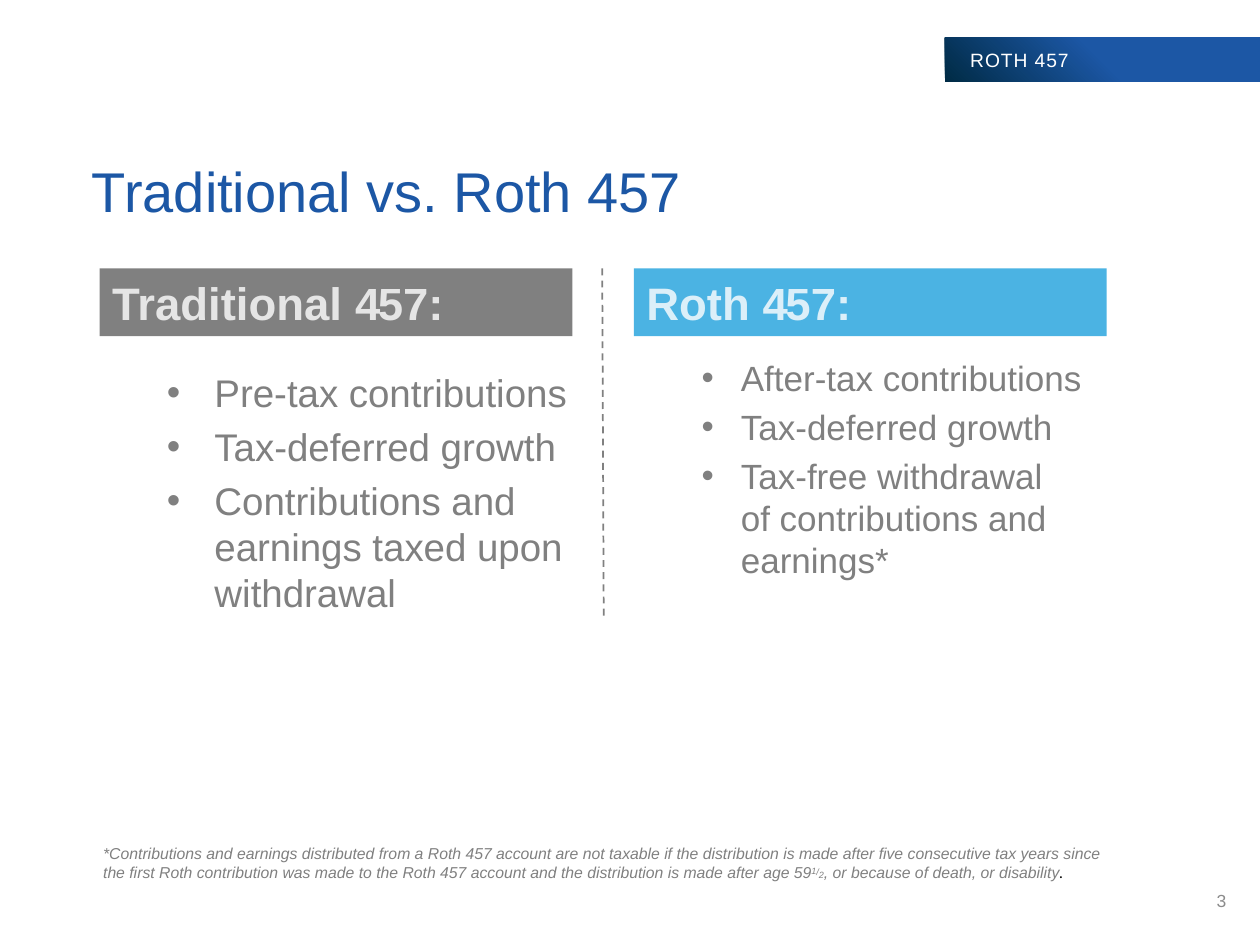
from dataclasses import dataclass

from lxml.etree import SubElement
from pptx import Presentation
from pptx.dml.color import RGBColor
from pptx.enum.dml import MSO_LINE_DASH_STYLE as Dash
from pptx.enum.shapes import MSO_CONNECTOR as Connector, MSO_SHAPE as Shape
from pptx.enum.text import MSO_ANCHOR as Anchor, MSO_AUTO_SIZE as AutoSize, PP_ALIGN as Align
from pptx.oxml.ns import qn
from pptx.util import Cm, Pt

COLORS = {
    "navy": "002B45", "blue": "1C57A5", "sky": "4BB3E3", "gray": "808080",
    "number": "8C8C8C", "white": "FFFFFF", "black": "000000",
}
TOP = 5.41  # shared top edge of both columns, in cm


@dataclass
class Column:
    list_left: float
    heading_left: float
    fill: str
    heading: str
    items: list[str]
    size: int
    inset_top: float
    indent: float
    hanging: float


COLUMNS = [
    Column(1.83, 2.01, "gray", "Traditional ",
           ["Pre-tax contributions", "Tax-deferred growth",
            "Contributions and earnings taxed upon withdrawal"],
           22, 2.03, 2.24, 0.96),
    Column(12.62, 12.78, "sky", "Roth ",
           ["After-tax contributions", "Tax-deferred growth",
            "Tax-free withdrawal \vof contributions and earnings*"],
           20, 1.77, 2.06, 0.79),
]


def rgb(name: str) -> RGBColor:
    return RGBColor.from_string(COLORS[name])


def set_format(target, values: dict) -> None:
    for attribute, value in values.items():
        setattr(target, attribute, value)


def place(shape, left: float, top: float, width: float, height: float) -> None:
    set_format(shape, {"left": Cm(left), "top": Cm(top),
                       "width": Cm(width), "height": Cm(height)})


def prepare_frame(shape, anchor: Anchor, **values):
    frame = shape.text_frame
    set_format(frame, {"word_wrap": True, "auto_size": AutoSize.NONE,
                       "vertical_anchor": anchor, **values})
    return frame


def add_run(paragraph, text: str, size: float, color: str, **values):
    """Add text (Arial unless told otherwise) and return its run properties."""
    run = paragraph.add_run()
    run.text = text
    set_format(run.font, {"name": "Arial", "size": Pt(size), **values})
    run.font.color.rgb = rgb(color)
    return run.font._element


def add_box(shapes, left: float, top: float, width: float, height: float):
    box = shapes.add_shape(Shape.RECTANGLE, Cm(left), Cm(top), Cm(width), Cm(height))
    box.shadow.inherit = False
    box.line.fill.background()
    return box


def fill_list(body, column: Column) -> None:
    place(body, column.list_left, TOP, 10.52, 7.95)
    frame = prepare_frame(body, Anchor.TOP, margin_top=Cm(column.inset_top))
    for index, item in enumerate(column.items):
        paragraph = frame.add_paragraph() if index else frame.paragraphs[0]
        paragraph.level = 1
        paragraph.space_before = Pt(0.2 * column.size if index else 0)
        properties = paragraph._p.get_or_add_pPr()
        properties.set("marL", str(Cm(column.indent)))
        properties.set("indent", str(-Cm(column.hanging)))
        SubElement(properties, qn("a:buFont"), typeface="Arial")
        SubElement(properties, qn("a:buChar"), char="•")
        # A line break takes its height from the paragraph font
        paragraph.font.size = Pt(column.size)
        for part, text in enumerate(item.split("\v")):
            if part:
                paragraph.add_line_break()
            add_run(paragraph, text, column.size, "gray")


def add_heading(shapes, column: Column) -> None:
    box = add_box(shapes, column.heading_left, TOP, 9.53, 1.37)
    box.fill.solid()
    box.fill.fore_color.rgb = rgb(column.fill)
    paragraph = prepare_frame(box, Anchor.MIDDLE).paragraphs[0]
    paragraph.alignment = Align.LEFT
    for text, spacing in [(column.heading, 0), ("45", -150), ("7:", 0)]:
        properties = add_run(paragraph, text, 26, "white", bold=True)
        properties.set("spc", str(spacing))
        color = properties.find(".//" + qn("a:srgbClr"))
        SubElement(color, qn("a:alpha"), val="80000")


def add_section_tab(shapes) -> None:
    tab = add_box(shapes, 19.05, 0.76, 6.35, 0.89)
    tab.fill.gradient()
    tab.fill.gradient_angle = 45
    for stop, (position, color) in zip(tab.fill.gradient_stops, [(0, "navy"), (0.5, "blue")]):
        stop.position = position
        stop.color.rgb = rgb(color)
    frame = prepare_frame(tab, Anchor.MIDDLE, margin_left=Cm(0.51))
    frame.paragraphs[0].alignment = Align.LEFT
    add_run(frame.paragraphs[0], "ROTH 457", 11, "white").set("spc", "50")


def add_divider(shapes) -> None:
    divider = shapes.add_connector(Connector.STRAIGHT, Cm(12.14), Cm(TOP), Cm(12.17), Cm(12.42))
    set_format(divider.line, {"width": Pt(1), "dash_style": Dash.DASH})
    divider.line.color.rgb = rgb("gray")
    SubElement(divider._element.spPr, qn("a:effectLst"))


def add_footnote(shapes) -> None:
    note = shapes.add_textbox(Cm(1.83), Cm(13.77), Cm(20.7), Cm(4.01))
    paragraph = prepare_frame(note, Anchor.BOTTOM, margin_bottom=0).paragraphs[0]
    parts = [
        ("*Contributions and earnings distributed from a Roth 457 account are not taxable "
         "if the distribution is made after five consecutive tax years since the first Roth "
         "contribution was made to the Roth 457 account and the distribution is made "
         "after age 59", 0),
        ("1", 30), ("/", 20), ("2", -1),
        (", or because of death, or disability", 0),
    ]
    for text, baseline in parts:
        properties = add_run(paragraph, text, 9, "gray", italic=True)
        properties.set("baseline", str(baseline * 1000))
    add_run(paragraph, ".", 9, "black", italic=True, name="Calibri")


def add_page_number(shapes) -> None:
    number = shapes.add_textbox(Cm(17.81), Cm(17.65), Cm(7.16), Cm(1.02))
    paragraph = prepare_frame(number, Anchor.MIDDLE).paragraphs[0]
    paragraph.alignment = Align.RIGHT
    add_run(paragraph, "3", 10, "number")


def main() -> None:
    deck = Presentation()
    set_format(deck, {"slide_width": Cm(25.4), "slide_height": Cm(19.05)})
    slide = deck.slides.add_slide(deck.slide_layouts.get_by_name("Two Content"))
    title, *bodies = slide.placeholders

    # Section tab and title
    add_section_tab(slide.shapes)
    place(title, 1.6, 2.24, 21.41, 3.18)
    title_line = prepare_frame(title, Anchor.MIDDLE).paragraphs[0]
    title_line.alignment = Align.LEFT
    add_run(title_line, "Traditional vs. Roth 457", 32, "blue")

    # Two compared plans with a divider between them
    for body, column in zip(bodies, COLUMNS):
        fill_list(body, column)
        add_heading(slide.shapes, column)
    add_divider(slide.shapes)

    # Foot of the slide
    add_footnote(slide.shapes)
    add_page_number(slide.shapes)
    deck.save("out.pptx")


if __name__ == "__main__":
    main()
